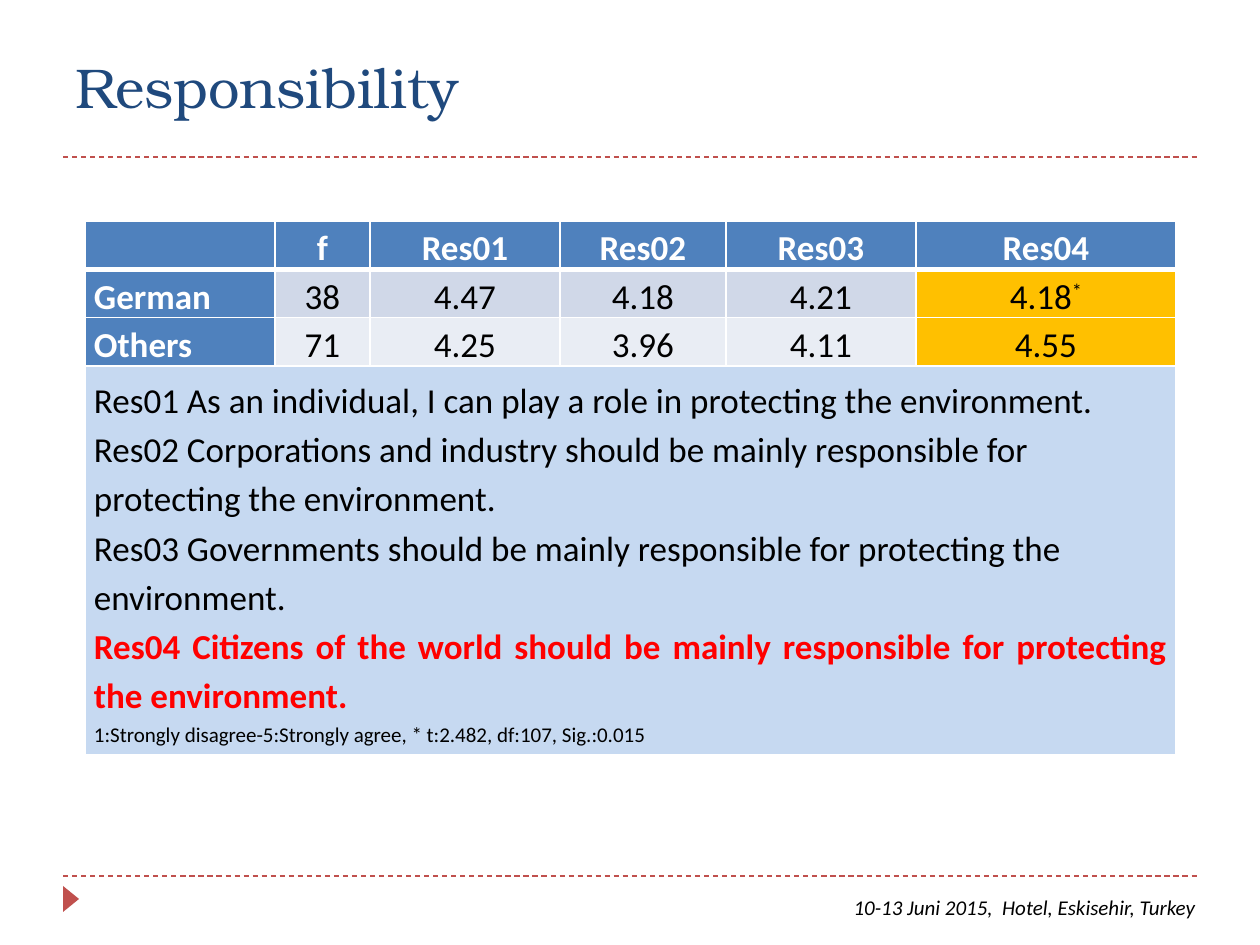
from lxml import etree
from pptx import Presentation
from pptx.dml.color import RGBColor
from pptx.enum.dml import MSO_LINE
from pptx.enum.shapes import MSO_CONNECTOR, MSO_SHAPE
from pptx.enum.text import MSO_ANCHOR, PP_ALIGN
from pptx.oxml.ns import qn
from pptx.util import Pt

EMU_PER_PX = 914400 / 126
LEFT, CENTER, RIGHT, JUSTIFY = PP_ALIGN.LEFT, PP_ALIGN.CENTER, PP_ALIGN.RIGHT, PP_ALIGN.JUSTIFY
MIDDLE, BOTTOM = MSO_ANCHOR.MIDDLE, MSO_ANCHOR.BOTTOM
STRAIGHT, TRIANGLE, DASH = MSO_CONNECTOR.STRAIGHT, MSO_SHAPE.ISOSCELES_TRIANGLE, MSO_LINE.DASH

WHITE, BLACK, RED = "FFFFFF", "000000", "FF0000"
NAVY, BLUE, ACCENT = "1F497D", "4F81BD", "C0504D"
HIGHLIGHT, NOTE_FILL = "FFC000", "C6D9F1"
BAND_FILLS = ["D0D8E8", "E9EDF4"]

BODY = {"name": "Calibri", "size": Pt(20), "bold": False}
STRONG = BODY | {"bold": True}
SMALL = BODY | {"size": Pt(12)}

COLUMN_WIDTHS = [190, 95, 190, 166, 190, 260]
ROW_HEIGHTS = [37, 37, 37, 389]
HEADER = ["", "f", "Res01", "Res02", "Res03", "Res04"]
SCORES = [
    ["German", "38", "4.47", "4.18", "4.21", "4.18"],
    ["Others", "71", "4.25", "3.96", "4.11", "4.55"],
]
STATEMENTS = [
    "Res01 As an individual, I can play a role in protecting the environment.",
    "Res02 Corporations and industry should be mainly responsible for protecting the environment.",
    "Res03 Governments should be mainly responsible for protecting the environment.",
]
KEY_STATEMENT = "Res04 Citizens of the world should be mainly responsible for protecting the environment."
SCALE_NOTE = "1:Strongly disagree-5:Strongly agree, * t:2.482, df:107, Sig.:0.015"


def px(*lengths):
    return [round(length * EMU_PER_PX) for length in lengths]


def color(hex_string):
    return RGBColor.from_string(hex_string)


def set_attributes(target, values):
    for name, value in values.items():
        setattr(target, name, value)


def fill_with(target, hex_string):
    target.fill.solid()
    target.fill.fore_color.rgb = color(hex_string)


def add_run(paragraph, text, font, hex_string):
    run = paragraph.add_run()
    run.text = text
    set_attributes(run.font, font)
    run.font.color.rgb = color(hex_string)
    return run


def add_text(slide, box, text, font, hex_string, **frame_format):
    text_frame = slide.shapes.add_textbox(*px(*box)).text_frame
    set_attributes(text_frame, {"word_wrap": True} | frame_format)
    paragraph = text_frame.paragraphs[0]
    add_run(paragraph, text, font, hex_string)
    return paragraph


def add_dashed_rule(slide, y):
    rule = slide.shapes.add_connector(STRAIGHT, *px(63, y, 1197, y))
    rule.line.color.rgb = color(ACCENT)
    set_attributes(rule.line, {"width": Pt(0.75), "dash_style": DASH})
    etree.SubElement(rule._element.spPr, qn("a:effectLst"))


def add_marker(slide):
    marker = slide.shapes.add_shape(TRIANGLE, *px(58, 891, 26, 16))
    marker.rotation = 90
    marker.shadow.inherit = False
    fill_with(marker, ACCENT)
    marker.line.fill.background()


def set_borders(cell, **widths):
    """Draw white borders, 1 pt unless a side is given its own width."""
    properties = cell._tc.get_or_add_tcPr()
    for side in "LRTB":
        border = etree.SubElement(properties, qn(f"a:ln{side}"), w=str(Pt(widths.get(side, 1))))
        solid = etree.SubElement(border, qn("a:solidFill"))
        etree.SubElement(solid, qn("a:srgbClr"), val=WHITE)


def format_cell(cell, hex_string, **border_widths):
    set_borders(cell, **border_widths)
    fill_with(cell, hex_string)
    side, none = px(9, 0)
    set_attributes(cell, {"margin_left": side, "margin_right": side, "margin_top": none,
                          "margin_bottom": none, "vertical_anchor": MIDDLE})


def write_cell(cell, entries):
    """Write one paragraph for each (text, font, colour, alignment)."""
    for index, (text, font, hex_string, alignment) in enumerate(entries):
        frame = cell.text_frame
        paragraph = frame.add_paragraph() if index else frame.paragraphs[0]
        set_attributes(paragraph, {"alignment": alignment, "line_spacing": 1.15})
        set_attributes(paragraph.font, font)
        if text:
            add_run(paragraph, text, font, hex_string)


def fill_header(table):
    for cell, text in zip(table.rows[0].cells, HEADER):
        format_cell(cell, BLUE, B=3)
        write_cell(cell, [(text, STRONG, WHITE, CENTER)])


def fill_scores(table):
    last = len(HEADER) - 1
    for row, (values, band) in enumerate(zip(SCORES, BAND_FILLS), start=1):
        for column, text in enumerate(values):
            cell = table.cell(row, column)
            fill = {0: BLUE, last: HIGHLIGHT}.get(column, band)
            format_cell(cell, fill, T=3 if row == 1 else 1)
            style = (BODY, BLACK, CENTER) if column else (STRONG, WHITE, LEFT)
            write_cell(cell, [(text, *style)])
    star = add_run(table.cell(1, last).text_frame.paragraphs[0], "*", BODY, BLACK)
    star.font._element.set("baseline", "30000")


def fill_statements(table):
    for cell in table.rows[3].cells:
        format_cell(cell, NOTE_FILL)
    first = table.cell(3, 0)
    first.merge(table.cell(3, len(HEADER) - 1))
    entries = [(text, BODY, BLACK, LEFT) for text in STATEMENTS]
    entries += [(KEY_STATEMENT, STRONG, RED, JUSTIFY), (SCALE_NOTE, SMALL, BLACK, JUSTIFY)]
    write_cell(first, entries)


def add_score_table(slide):
    box = px(85, 221, sum(COLUMN_WIDTHS), sum(ROW_HEIGHTS))
    table = slide.shapes.add_table(len(ROW_HEIGHTS), len(COLUMN_WIDTHS), *box).table
    for column, width in zip(table.columns, px(*COLUMN_WIDTHS)):
        column.width = width
    for row, height in zip(table.rows, px(*ROW_HEIGHTS)):
        row.height = height
    fill_header(table)
    fill_scores(table)
    fill_statements(table)


def main():
    presentation = Presentation()
    presentation.slide_width, presentation.slide_height = px(1260, 945)
    slide = presentation.slides.add_slide(presentation.slide_layouts[6])
    for y in (876, 157):
        add_dashed_rule(slide, y)
    add_marker(slide)
    title_font = {"name": "TeX Gyre Bonum", "size": Pt(32)}
    add_text(slide, (63, 21, 1134, 105), "Responsibility", title_font, NAVY, vertical_anchor=BOTTOM)
    add_score_table(slide)
    footer = add_text(slide, (765, 888, 443, 38), "10-13 Juni 2015,  Hotel, Eskisehir, Turkey",
                      SMALL | {"italic": True}, BLACK)
    footer.alignment = RIGHT
    presentation.save("out.pptx")


if __name__ == "__main__":
    main()
